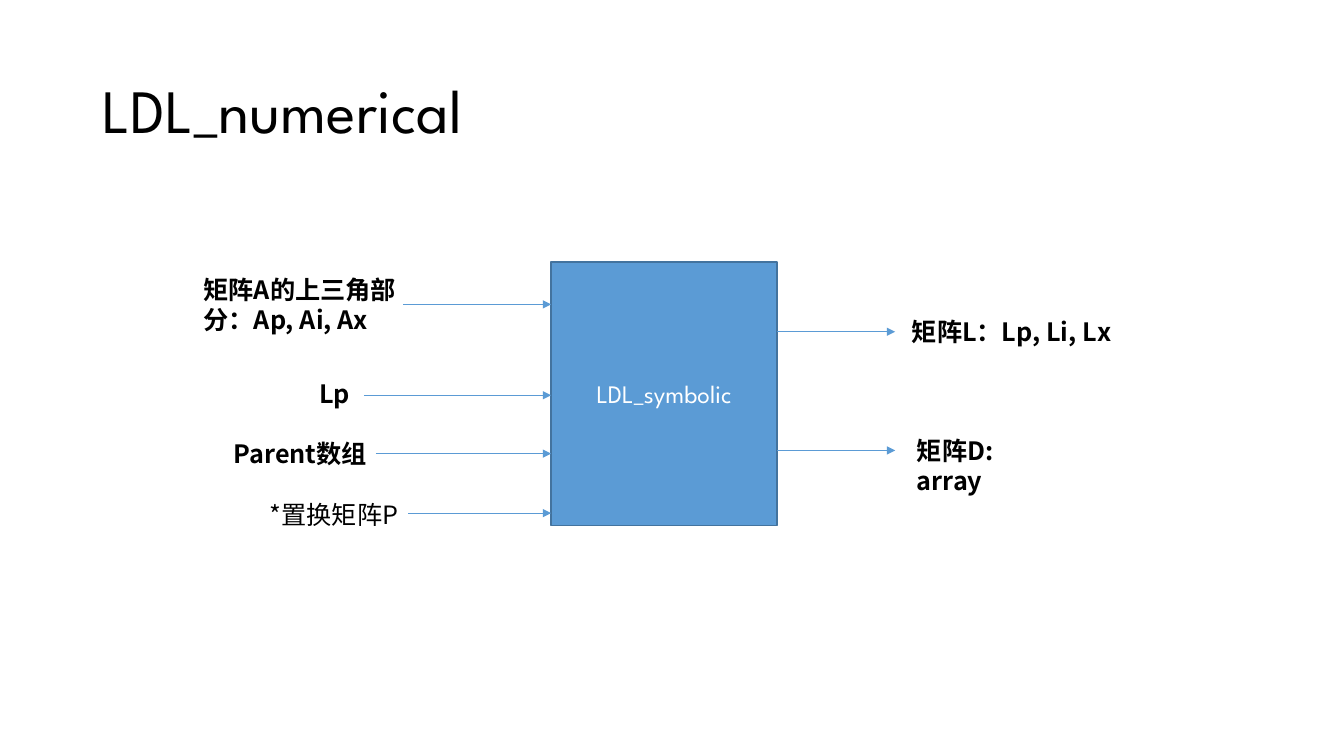
"""Build the LDL_numerical slide: a block with its input and output arrows."""
import pptx
import pptx.util
import pptx.dml.color
import pptx.enum.shapes
import pptx.enum.text
import pptx.oxml
import pptx.oxml.ns

Cm, Pt = pptx.util.Cm, pptx.util.Pt
Anchor, Align = pptx.enum.text.MSO_ANCHOR, pptx.enum.text.PP_ALIGN

THEME = {
    "latin": "League Spartan", "cjk": "Noto Sans CJK SC",
    "black": "000000", "white": "FFFFFF", "blue": "5B9BD5", "edge": "43739E",
    "title": 44, "body": 18, "outline": 1, "arrow": 0.5,
}
TITLE = ("LDL_numerical", (2.33, 1.02, 29.21, 3.68))
BLOCK = ("LDL_symbolic", (13.89, 6.6, 5.69, 6.65))
LINE_HEIGHT = 1.02
OUTPUT_END = 22.56
INPUTS = [
    {"text": "矩阵A的上三角部分：Ap, Ai, Ax", "at": (4.88, 6.78, 5.87, 1.8), "bold": True, "start": 10.16, "y": 7.67},
    {"text": "Lp", "at": (7.8, 9.42, 1.37, LINE_HEIGHT), "bold": True, "start": 9.17, "y": 9.96},
    {"text": "Parent数组", "at": (5.64, 10.92, 4.04, LINE_HEIGHT), "bold": True, "start": 9.47, "y": 11.43},
    {"text": "*置换矩阵P", "at": (6.55, 12.47, 4.52, LINE_HEIGHT), "bold": False, "start": 10.29, "y": 12.93},
]
OUTPUTS = [
    {"text": "矩阵L：Lp, Li, Lx", "at": (22.73, 7.85, 5.87, LINE_HEIGHT), "bold": True, "y": 8.36},
    {"text": "矩阵D: array", "at": (22.86, 10.85, 4.14, LINE_HEIGHT), "bold": True, "y": 11.35},
]


def color(name):
    return pptx.dml.color.RGBColor.from_string(THEME[name])


def assign(target, values):
    for name, value in values.items():
        setattr(target, name, value)


def append_xml(parent, tag, **attributes):
    element = pptx.oxml.parse_xml(f"<a:{tag} {pptx.oxml.ns.nsdecls('a')}/>")
    for name, value in attributes.items():
        element.set(name, value)
    parent.append(element)


def write(box, text, font, size, ink, bold=False, frame_format=None, para_format=None):
    frame = box.text_frame
    assign(frame, {"word_wrap": True, **(frame_format or {})})
    para = frame.paragraphs[0]
    assign(para, para_format or {})
    span = para.add_run()
    span.text = text
    assign(span.font, {"name": THEME[font], "size": Pt(THEME[size]), "bold": bold})
    span.font.color.rgb = color(ink)
    append_xml(span.font._element, "ea", typeface=THEME[font])


def add_label(page, label):
    box = page.shapes.add_textbox(*map(Cm, label["at"]))
    write(box, label["text"], "cjk", "body", "black", label["bold"])


def add_arrow(page, start, end, y):
    arrow = page.shapes.add_connector(
        pptx.enum.shapes.MSO_CONNECTOR.STRAIGHT, Cm(start), Cm(y), Cm(end), Cm(y))
    arrow.line.color.rgb = color("blue")
    arrow.line.width = Pt(THEME["arrow"])
    append_xml(arrow.line._get_or_add_ln(), "tailEnd", type="triangle")
    append_xml(arrow._element.spPr, "effectLst")


def add_block(page):
    text, at = BLOCK
    block = page.shapes.add_shape(pptx.enum.shapes.MSO_SHAPE.RECTANGLE, *map(Cm, at))
    block.shadow.inherit = False
    block.fill.solid()
    block.fill.fore_color.rgb = color("blue")
    block.line.color.rgb = color("edge")
    block.line.width = Pt(THEME["outline"])
    write(block, text, "latin", "body", "white",
          frame_format={"vertical_anchor": Anchor.MIDDLE},
          para_format={"alignment": Align.CENTER})


def main():
    deck = pptx.Presentation()
    assign(deck, {"slide_width": Cm(33.87), "slide_height": Cm(19.05)})
    page = deck.slides.add_slide(deck.slide_layouts[6])

    text, at = TITLE
    title = page.shapes.add_textbox(*map(Cm, at))
    write(title, text, "latin", "title", "black",
          frame_format={"vertical_anchor": Anchor.MIDDLE},
          para_format={"line_spacing": 0.9})

    add_block(page)
    block_left, _, block_width, _ = BLOCK[1]
    for label in INPUTS:
        add_arrow(page, label["start"], block_left, label["y"])
        add_label(page, label)
    for label in OUTPUTS:
        add_arrow(page, block_left + block_width, OUTPUT_END, label["y"])
        add_label(page, label)
    deck.save("out.pptx")


if __name__ == "__main__":
    main()
